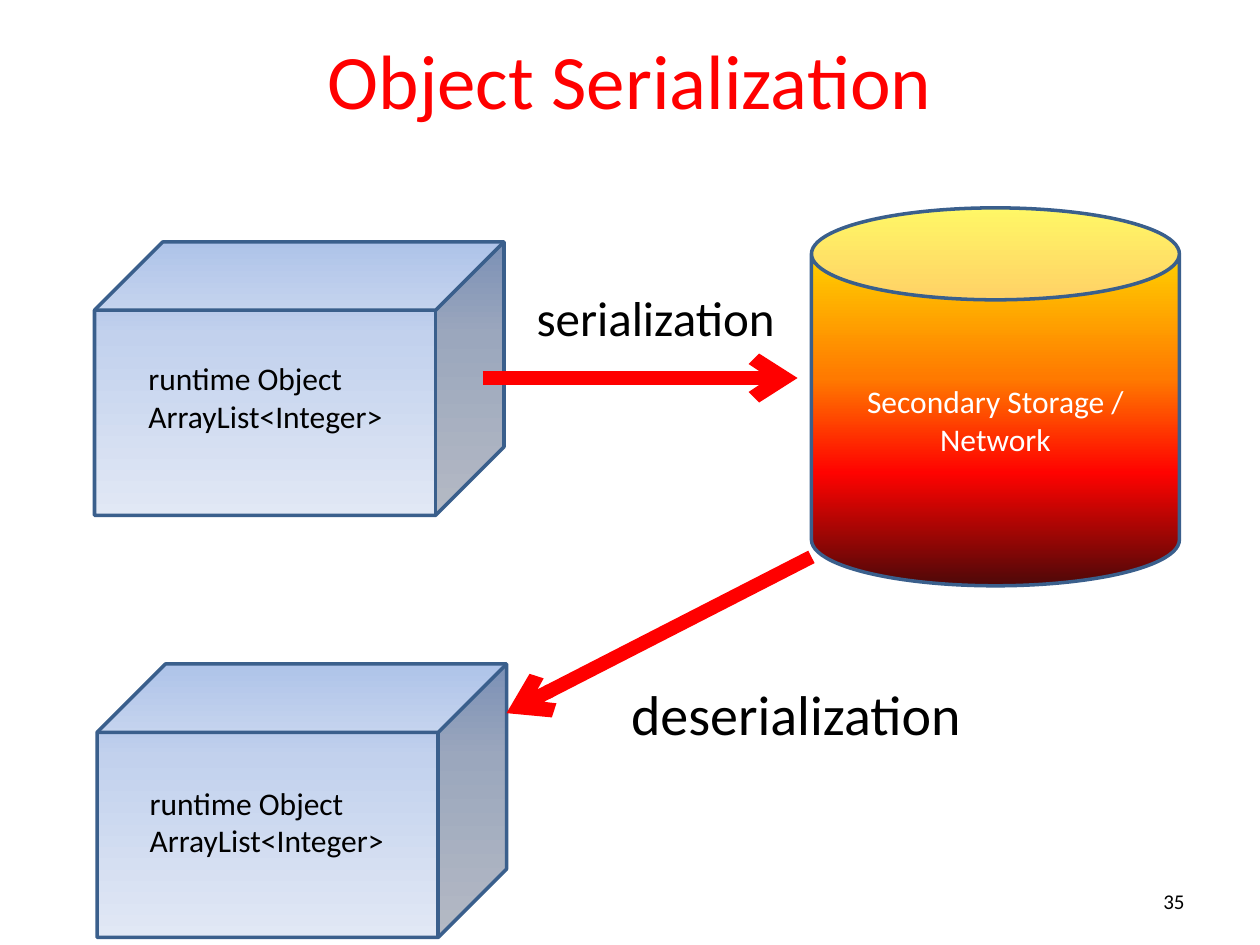
from lxml import etree
from pptx import Presentation
from pptx.dml.color import RGBColor
from pptx.enum.shapes import MSO_CONNECTOR, MSO_SHAPE
from pptx.enum.text import MSO_ANCHOR, MSO_AUTO_SIZE, PP_ALIGN
from pptx.oxml.ns import qn
from pptx.util import Inches, Pt

CUBE, CAN = MSO_SHAPE.CUBE, MSO_SHAPE.CAN
LINE = MSO_CONNECTOR.STRAIGHT
LEFT, MID, RIGHT = PP_ALIGN.LEFT, PP_ALIGN.CENTER, PP_ALIGN.RIGHT
TOP, CENTER = MSO_ANCHOR.TOP, MSO_ANCHOR.MIDDLE
GROW, FIXED = MSO_AUTO_SIZE.SHAPE_TO_FIT_TEXT, MSO_AUTO_SIZE.NONE

HUES = {"red": "FF0000", "black": "000000", "white": "FFFFFF", "edge": "3A5F8C"}
ICE = {0: "9AB5E4", 34: "C2D1ED", 100: "E1E8F5"}
FIRE = {0: "FFF200", 45: "FF7A00", 70: "FF0300", 100: "4D0808"}


def write(shape, text, size, hue="black", align=LEFT, **frame):
    """Fill a shape with one formatted paragraph."""
    body = shape.text_frame
    form = {"word_wrap": True, "vertical_anchor": TOP, "auto_size": FIXED}
    for name, value in (form | frame).items():
        setattr(body, name, value)
    para = body.paragraphs[0]
    para.text = text
    para.alignment = align
    for run in para.runs:
        run.font.name = "Calibri"
        run.font.size = Pt(size)
        run.font.color.rgb = RGBColor.from_string(HUES[hue])


def solid(kind, box, stops):
    """Add an outlined shape with a top-to-bottom gradient."""
    shape = slide.shapes.add_shape(kind, *map(Inches, box))
    shape.shadow.inherit = False
    shape.fill.gradient()
    shape.fill.gradient_angle = 270
    ramp = shape.element.spPr.find(qn("a:gradFill")).find(qn("a:gsLst"))
    for old in list(ramp):
        ramp.remove(old)
    for pos, hue in stops.items():
        stop = etree.SubElement(ramp, qn("a:gs"), pos=str(pos * 1000))
        etree.SubElement(stop, qn("a:srgbClr"), val=hue)
    shape.line.color.rgb = RGBColor.from_string(HUES["edge"])
    shape.line.width = Pt(2)
    return shape


deck = Presentation()
deck.slide_width, deck.slide_height = Inches(10), Inches(7.5)
slide = deck.slides.add_slide(deck.slide_layouts[5])

# Title
title = slide.shapes.title
title.left, title.top = Inches(0.5), Inches(0)
title.width, title.height = Inches(9), Inches(1.25)
write(title, "Object Serialization", 44, "red", MID, vertical_anchor=CENTER)

# Runtime objects and storage
for left, top in ((0.75, 1.92), (0.77, 5.27)):
    solid(CUBE, (left, top, 3.25, 2.17), ICE)
store = solid(CAN, (6.44, 1.65, 2.92, 3), FIRE)
write(store, "Secondary Storage / Network", 18, "white", MID, vertical_anchor=CENTER)

# Labels and slide number
held = "runtime Object\nArrayList<Integer>"
grow = {"auto_size": GROW}
loose = grow | {"word_wrap": False}
labels = (
    (held, (1.08, 2.8, 2.17, 0.71), 18, LEFT, grow),
    (held, (1.09, 6.17, 2.17, 0.71), 18, LEFT, grow),
    ("serialization", (4.16, 2.23, 2.12, 0.57), 28, LEFT, loose),
    ("deserialization", (4.91, 5.34, 2.85, 0.64), 32, LEFT, loose),
    ("35", (7.17, 6.95, 2.33, 0.4), 12, RIGHT, {"vertical_anchor": CENTER}),
)
for text, box, size, align, frame in labels:
    label = slide.shapes.add_textbox(*map(Inches, box))
    write(label, text, size, align=align, **frame)

# Arrows to and from storage
for ends in ((3.83, 3, 6.33, 3), (6.44, 4.42, 4.02, 5.66)):
    arrow = slide.shapes.add_connector(LINE, *map(Inches, ends))
    arrow.line.color.rgb = RGBColor.from_string(HUES["red"])
    arrow.line.width = Pt(8)
    props = arrow.element.spPr
    etree.SubElement(props.find(qn("a:ln")), qn("a:tailEnd"), type="arrow")
    etree.SubElement(props, qn("a:effectLst"))

deck.save("out.pptx")
